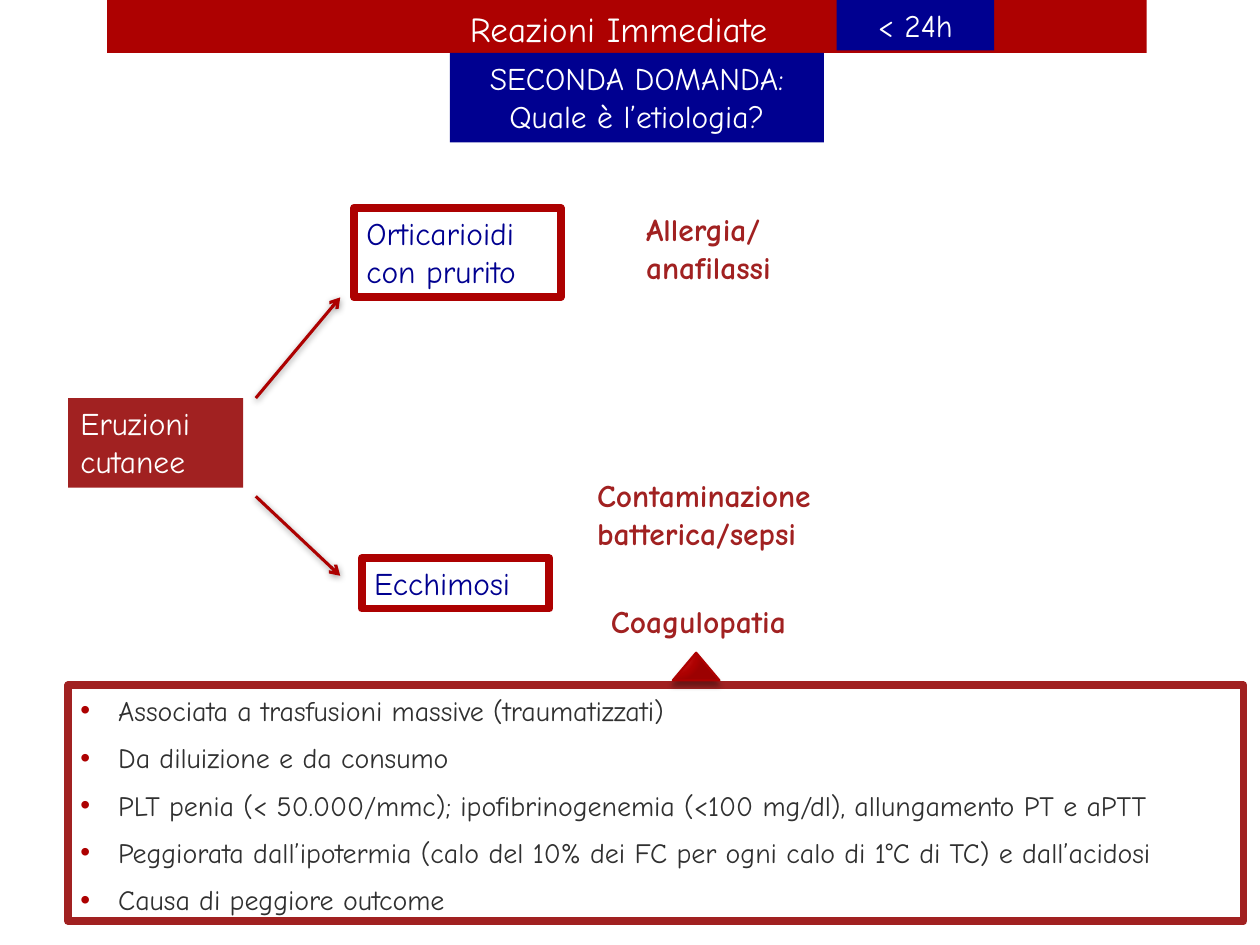
from lxml.etree import SubElement
from pptx import Presentation
from pptx.dml.color import RGBColor
from pptx.enum.shapes import MSO_CONNECTOR, MSO_SHAPE
from pptx.enum.text import MSO_ANCHOR, MSO_AUTO_SIZE, PP_ALIGN
from pptx.oxml import parse_xml
from pptx.oxml.ns import nsdecls, qn
from pptx.util import Inches, Pt

FONT = "Comic Neue"
COLORS = {name: RGBColor.from_string(value) for name, value in {
    "red": "AD0101", "brick": "A12121", "navy": "000090",
    "white": "FFFFFF", "text": "303030"}.items()}

deck = Presentation()
deck.slide_width, deck.slide_height = Inches(10), Inches(7.5)
COL, ROW = deck.slide_width / 100, deck.slide_height / 100
slide = deck.slides.add_slide(deck.slide_layouts[5])
shapes = slide.shapes


def write(shape, lines, color, size=18, align=PP_ALIGN.LEFT, bold=False,
          anchor=MSO_ANCHOR.TOP, fit=MSO_AUTO_SIZE.SHAPE_TO_FIT_TEXT):
    frame = shape.text_frame
    frame.text = "\n".join(lines)
    frame.word_wrap, frame.auto_size, frame.vertical_anchor = True, fit, anchor
    for paragraph in frame.paragraphs:
        paragraph.alignment = align
        for run in paragraph.runs:
            run.font.name, run.font.size, run.font.bold = FONT, Pt(size), bold
            run.font.color.rgb = COLORS[color]


def place(left, top, width, height, fill=None, line=None, weight=4.5,
          kind=MSO_SHAPE.RECTANGLE):
    """Add a shape; lengths are hundredths of the slide's width and height."""
    shape = shapes.add_shape(kind, int(left * COL), int(top * ROW),
                             int(width * COL), int(height * ROW))
    shape.shadow.inherit = False
    if fill:
        shape.fill.solid()
        shape.fill.fore_color.rgb = COLORS[fill]
    else:
        shape.fill.background()
    if line:
        shape.line.color.rgb = COLORS[line]
        shape.line.width = Pt(weight)
    else:
        shape.line.fill.background()
    return shape


# Header: band behind the title, time window and question
band = place(8.5, 0, 82.5, 5.6, fill="red")
title = shapes.title
title.left, title.top = int(36.3 * COL), int(0.13 * ROW)
title.width, title.height = int(28.3 * COL), int(5.87 * ROW)
write(title, ["Reazioni Immediate"], "white", size=20)
title._element.addprevious(band._element)

question = place(35.7, 5.6, 29.7, 9.47, fill="navy")
write(question, ["SECONDA DOMANDA:", "Quale è l’etiologia?"], "white",
      align=PP_ALIGN.CENTER)
window = place(66.4, 0, 12.5, 5.33, fill="navy")
write(window, ["< 24h"], "white", align=PP_ALIGN.CENTER)

# Diagram: eruption, its two forms and their causes
eruption = place(5.4, 42.13, 13.9, 9.47, fill="brick")
write(eruption, ["Eruzioni cutanee"], "white")

for lines, box in [
        (["Orticarioidi", "con prurito"], (28.1, 22, 16.4, 9.47)),
        (["Ecchimosi"], (28.7, 59.07, 14.9, 5.33))]:
    write(place(*box, line="red"), lines, "navy")

for lines, box in [
        (["Allergia/", "anafilassi"], (50.3, 21.6, 45.3, 9.47)),
        (["Contaminazione batterica/sepsi"], (46.4, 49.73, 25.2, 9.47)),
        (["Coagulopatia"], (47.5, 63.07, 25.2, 5.33))]:
    left, top, width, height = box
    cause = shapes.add_textbox(int(left * COL), int(top * ROW),
                               int(width * COL), int(height * ROW))
    write(cause, lines, "brick", bold=True)

arrows = []
for start, end in [(42.13, 31.47), (52.53, 60.93)]:
    arrow = shapes.add_connector(
        MSO_CONNECTOR.STRAIGHT, int(20.3 * COL), int(start * ROW),
        int(27 * COL), int(end * ROW))
    arrow.line.color.rgb = COLORS["red"]
    arrow.line.width = Pt(1.75)
    SubElement(arrow.line._get_or_add_ln(), qn("a:tailEnd"), type="arrow")
    arrows.append(arrow)

# Coagulopathy details with the pointer above them
details = place(5.4, 72.53, 93.3, 24.93, fill="white", line="brick")
write(details, [
    "Associata a trasfusioni massive (traumatizzati)",
    "Da diluizione e da consumo",
    "PLT penia (< 50.000/mmc); ipofibrinogenemia (<100 mg/dl), allungamento PT e aPTT",
    "Peggiorata dall’ipotermia (calo del 10% dei FC per ogni calo di 1°C di TC) e dall’acidosi",
    "Causa di peggiore outcome",
], "text", size=16, anchor=MSO_ANCHOR.MIDDLE, fit=MSO_AUTO_SIZE.NONE)
for item in details.text_frame.paragraphs:
    item.line_spacing, item.space_after = 1.1, Pt(6)
    properties = item._p.get_or_add_pPr()
    properties.set("marL", str(Inches(0.3)))
    properties.set("indent", str(-Inches(0.3)))
    bullet_color = SubElement(properties, qn("a:buClr"))
    SubElement(bullet_color, qn("a:srgbClr"), val=str(COLORS["red"]))
    SubElement(properties, qn("a:buFont"), typeface="Arial")
    SubElement(properties, qn("a:buChar"), char="•")

pointer = place(53.4, 69.07, 3.7, 2.93, fill="red", line="red", weight=1.25,
                kind=MSO_SHAPE.ISOSCELES_TRIANGLE)
stops = "".join(
    f'<a:gs pos="{share * 1000}"><a:srgbClr val="{shade}"/></a:gs>'
    for share, shade in [(0, "E62F2F"), (76, COLORS["red"]), (100, "9C0101")])
gradient = parse_xml(
    f'<a:gradFill {nsdecls("a")}><a:gsLst>{stops}</a:gsLst><a:path path="circle">'
    '<a:fillToRect l="15000" t="15000" r="100000" b="100000"/></a:path></a:gradFill>')
solid = pointer._element.spPr.find(qn("a:solidFill"))
solid.getparent().replace(solid, gradient)

# Soft shadows: opacity in percent, blur and distance in points, angle in degrees
for shape, opacity, blur, distance, angle in [
        (arrows[0], 40, 4, 1, 88), (arrows[1], 40, 4, 1, 88), (pointer, 35, 3, 3, 90)]:
    outline = shape._element.spPr
    for empty in outline.findall(qn("a:effectLst")):
        outline.remove(empty)
    effects = SubElement(outline, qn("a:effectLst"))
    shadow = SubElement(effects, qn("a:outerShdw"), blurRad=str(Pt(blur)),
                        dist=str(Pt(distance)), dir=str(angle * 60000), rotWithShape="0")
    black = SubElement(shadow, qn("a:srgbClr"), val="000000")
    SubElement(black, qn("a:alpha"), val=str(opacity * 1000))

deck.save("out.pptx")
